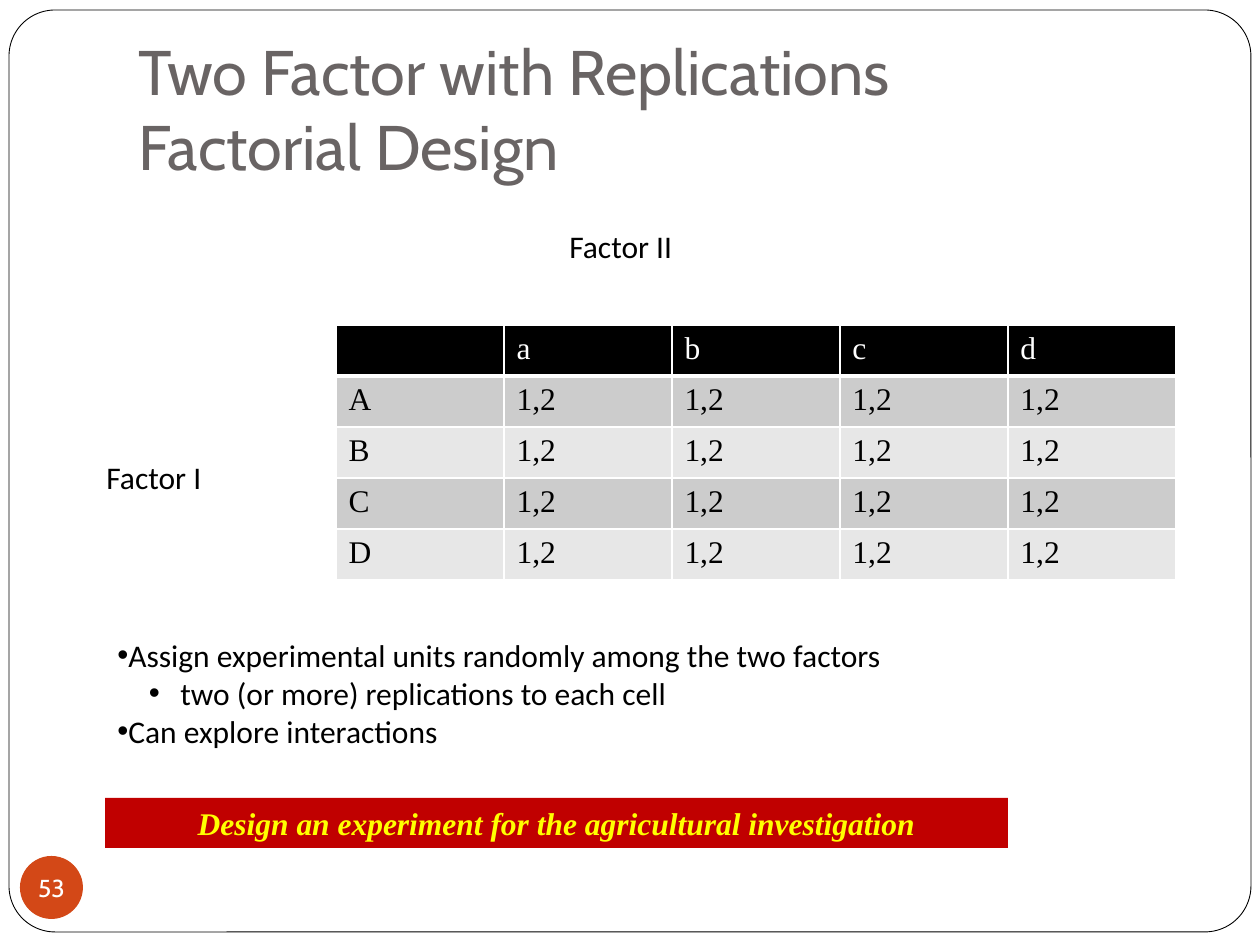
from lxml import etree
from pptx import Presentation
from pptx import util as u
from pptx.dml.color import RGBColor
from pptx.enum import shapes, text
from pptx.oxml import ns

PX = 914400 / 126
COLORS = {
    "white": "FFFFFF", "black": "000000", "title": "696464", "badge": "D34817",
    "dark band": "CCCCCC", "light band": "E7E7E7", "banner": "C00000", "yellow": "FFFF00",
}
HEADING, BODY, SERIF = "Cabin", "Calibri", "Times New Roman"


def px(*lengths):
    return [u.Emu(round(length * PX)) for length in lengths]


def rgb(name):
    return RGBColor.from_string(COLORS[name])


class SlideBuilder:
    """Holds the current slide and draws each kind of element on it."""

    def __init__(self, slide):
        self.slide = slide

    def style(self, paragraph, font=BODY, size=18, color="black", bold=False, italic=False):
        paragraph.font.name = font
        paragraph.font.size = u.Pt(size)
        paragraph.font.color.rgb = rgb(color)
        paragraph.font.bold = bold
        paragraph.font.italic = italic

    def title(self, words, box):
        shape = self.slide.shapes.title
        shape.left, shape.top, shape.width, shape.height = px(*box)
        frame = shape.text_frame
        frame.text = words
        frame.auto_size = text.MSO_AUTO_SIZE.NONE
        frame.vertical_anchor = text.MSO_ANCHOR.BOTTOM
        frame.margin_bottom = u.Inches(0.1)
        paragraph = frame.paragraphs[0]
        paragraph.alignment = text.PP_ALIGN.LEFT
        self.style(paragraph, HEADING, 36, "title")

    def shape(self, kind, box, fill, line=None, words="", **font):
        shape = self.slide.shapes.add_shape(kind, *px(*box))
        shape.shadow.inherit = False
        shape.fill.solid()
        shape.fill.fore_color.rgb = rgb(fill)
        if line:
            shape.line.color.rgb = rgb(line)
            shape.line.width = u.Pt(0.5)
        else:
            shape.line.fill.background()
        if words:
            shape.text_frame.text = words
            paragraph = shape.text_frame.paragraphs[0]
            paragraph.alignment = text.PP_ALIGN.CENTER
            self.style(paragraph, **font)
        return shape

    def text_box(self, lines, box):
        frame = self.slide.shapes.add_textbox(*px(*box)).text_frame
        frame.word_wrap = True
        frame.text = "\n".join(lines)
        for paragraph in frame.paragraphs:
            self.style(paragraph)
        return frame

    def bullets(self, items, box):
        """Draw (level, words) pairs as a bulleted list."""
        frame = self.text_box([words for _, words in items], box)
        for (level, _), paragraph in zip(items, frame.paragraphs):
            paragraph.level = level
            properties = paragraph._p.get_or_add_pPr()
            properties.set("marL", str(u.Inches(0.5 * level)))
            properties.set("indent", str(-u.Inches(0.25 * level)))
            bullet_font = etree.Element(ns.qn("a:buFont"), typeface="Arial")
            bullet = etree.Element(ns.qn("a:buChar"), char="•")
            properties.insert(0, bullet_font)
            properties.insert(1, bullet)

    def borders(self, cell, bottom):
        properties = cell._tc.get_or_add_tcPr()
        for side, width in zip("LRTB", (1, 1, 1, bottom)):
            line = etree.SubElement(properties, ns.qn(f"a:ln{side}"), w=str(u.Pt(width)))
            fill = etree.SubElement(line, ns.qn("a:solidFill"))
            etree.SubElement(fill, ns.qn("a:srgbClr"), val=COLORS["white"])

    def table(self, rows, left, top, column_width, row_height):
        count = len(rows[0])
        box = left, top, column_width * count, row_height * len(rows)
        table = self.slide.shapes.add_table(len(rows), count, *px(*box)).table
        table.horz_banding = False
        for column in table.columns:
            column.width = px(column_width)[0]
        for i, values in enumerate(rows):
            table.rows[i].height = px(row_height)[0]
            header = i == 0
            band = "black" if header else "dark band" if i % 2 else "light band"
            for j, value in enumerate(values):
                cell = table.cell(i, j)
                cell.text = value
                self.style(cell.text_frame.paragraphs[0], SERIF,
                           color="white" if header else "black")
                self.borders(cell, 3 if header else 1)
                cell.fill.solid()
                cell.fill.fore_color.rgb = rgb(band)


def main():
    presentation = Presentation()
    presentation.slide_width, presentation.slide_height = px(1260, 945)
    slide = presentation.slides.add_slide(presentation.slide_layouts[5])
    builder = SlideBuilder(slide)

    panel = builder.shape(shapes.MSO_SHAPE.ROUNDED_RECTANGLE, (9, 10, 1242, 922),
                          "white", line="black")
    panel.adjustments[0] = 0.05
    badge = builder.shape(shapes.MSO_SHAPE.OVAL, (20, 856, 63, 63), "badge",
                          words="53", font=HEADING, size=14, color="white")
    frame = badge.text_frame
    frame.margin_left = frame.margin_right = frame.margin_top = frame.margin_bottom = 0
    frame.word_wrap = False

    # The title placeholder comes first by default; bring it in front of the panel.
    slide.shapes._spTree.append(slide.shapes.title._element)
    builder.title("Two Factor with Replications\vFactorial Design", (126, 38, 1071, 158))

    rows = [["", *"abcd"]] + [[level] + ["1,2"] * 4 for level in "ABCD"]
    builder.table(rows, 336, 325, column_width=168, row_height=51)
    builder.bullets([
        (0, "Assign experimental units randomly among the two factors"),
        (1, "two (or more) replications to each cell"),
        (0, "Can explore interactions"),
    ], (105, 630, 1029, 126))
    builder.text_box(["Factor I"], (94, 452, 231, 50))
    builder.text_box(["Factor II"], (557, 221, 315, 50))
    builder.shape(shapes.MSO_SHAPE.RECTANGLE, (105, 798, 903, 50), "banner",
                  words="Design an experiment for the agricultural investigation",
                  font=SERIF, color="yellow", bold=True, italic=True)

    presentation.save("out.pptx")


if __name__ == "__main__":
    main()
